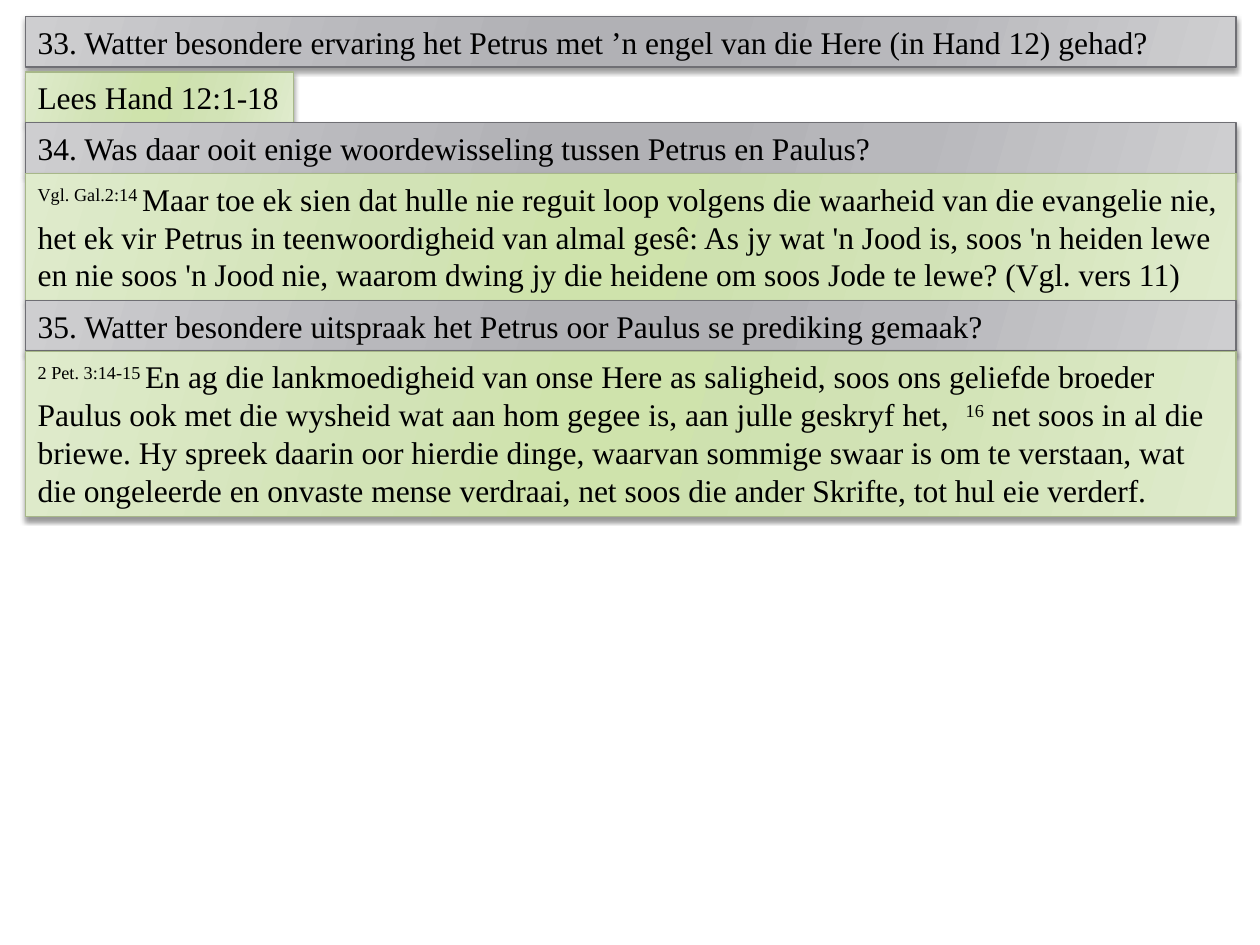
import dataclasses

import lxml.etree
import pptx
import pptx.dml.color
import pptx.enum.shapes
import pptx.enum.text
import pptx.oxml
import pptx.oxml.ns
import pptx.util

Inches = pptx.util.Inches
Pt = pptx.util.Pt
RGB = pptx.dml.color.RGBColor.from_string


# Colours, type and spacing
@dataclasses.dataclass(frozen=True)
class Theme:
    font: str = "Times New Roman"
    size: int = 18
    ink: str = "000000"
    gray: tuple = ("CECED0", "B8B8BC", "B1B1B5", "B1B1B5", "B8B8BC", "CECED0")
    green: tuple = ("DFEBCC", "D2E3B6", "CFE3AC", "CEE1AF", "D2E3B6", "DFEBCC")
    stops: tuple = (0, 30, 45, 55, 73, 100)
    angle: int = 16
    gray_edge: str = "6F6F74"
    green_edge: str = "A7B789"
    left: float = 0.2
    top: float = 0.13
    wide: float = 9.61
    gap: float = 0.04
    pad: float = 0.05


THEME = Theme()

# Each row: question or answer, line count, width, gap below, (text, raised) runs
ROWS = [
    ("ask", 1, THEME.wide, THEME.gap, [
        ("33. Watter besondere ervaring het Petrus met ’n engel van die Here "
         "(in Hand 12) gehad?", False)]),
    ("reply", 1, 2.13, 0, [("Lees Hand 12:1-18", False)]),
    ("ask", 1, THEME.wide, 0, [
        ("34. Was daar ooit enige woordewisseling tussen Petrus en Paulus?", False)]),
    ("reply", 3, THEME.wide, 0, [
        ("Vgl. Gal.2:14 ", True),
        ("Maar toe ek sien dat hulle nie reguit loop volgens die waarheid van die "
         "evangelie nie, het ek vir Petrus in teenwoordigheid van almal gesê: As jy "
         "wat 'n Jood is, soos 'n heiden lewe en nie soos 'n Jood nie, waarom dwing "
         "jy die heidene om soos Jode te lewe? (Vgl. vers 11)", False)]),
    ("ask", 1, THEME.wide, 0, [
        ("35. Watter besondere uitspraak het Petrus oor Paulus se prediking gemaak?",
         False)]),
    ("reply", 4, THEME.wide, 0, [
        ("2 Pet. 3:14-15 ", True),
        ("En ag die lankmoedigheid van onse Here as saligheid, soos ons geliefde "
         "broeder Paulus ook met die wysheid wat aan hom gegee is, aan julle geskryf "
         "het,  ", False),
        ("16", True),
        (" net soos in al die briewe. Hy spreek daarin oor hierdie dinge, waarvan "
         "sommige swaar is om te verstaan, wat die ongeleerde en onvaste mense "
         "verdraai, net soos die ander Skrifte, tot hul eie verderf.", False)]),
]


def child(node, tag, **attrs):
    item = lxml.etree.SubElement(node, pptx.oxml.ns.qn(tag))
    for name, value in attrs.items():
        item.set(name, str(value))
    return item


def blend(shape, colors):
    """Fill with a many-stop linear gradient."""
    shape.fill.gradient()
    shape.fill.gradient_angle = 0
    grad = shape.element.spPr.find(pptx.oxml.ns.qn("a:gradFill"))
    stops = grad.find(pptx.oxml.ns.qn("a:gsLst"))
    for old in list(stops):
        stops.remove(old)
    for place, color in zip(THEME.stops, colors):
        stop = child(stops, "a:gs", pos=place * 1000)
        child(stop, "a:srgbClr", val=color)
    grad.find(pptx.oxml.ns.qn("a:lin")).set("ang", str(THEME.angle * 60000))


def shade(shape):
    """Drop a soft shadow straight down."""
    shape.shadow.inherit = False
    effect = shape.element.spPr.find(pptx.oxml.ns.qn("a:effectLst"))
    drop = child(effect, "a:outerShdw", blurRad=Pt(3), dist=Pt(2),
                 dir=90 * 60000, rotWithShape=0)
    color = child(drop, "a:srgbClr", val=THEME.ink)
    child(color, "a:alpha", val=40000)


def write(shape, parts):
    frame = shape.text_frame
    frame.word_wrap = True
    frame.auto_size = pptx.enum.text.MSO_AUTO_SIZE.SHAPE_TO_FIT_TEXT
    frame.vertical_anchor = pptx.enum.text.MSO_ANCHOR.TOP
    frame.margin_top = frame.margin_bottom = Inches(THEME.pad)
    para = frame.paragraphs[0]
    para.alignment = pptx.enum.text.PP_ALIGN.LEFT
    for text, raised in parts:
        run = para.add_run()
        run.text = text
        run.font.name = THEME.font
        run.font.size = Pt(THEME.size)
        run.font.color.rgb = RGB(THEME.ink)
        if raised:
            run.font._element.set("baseline", "30000")


def panel(slide, kind, top, wide, high, parts):
    shape = slide.shapes.add_shape(
        pptx.enum.shapes.MSO_SHAPE.RECTANGLE,
        Inches(THEME.left), Inches(top), Inches(wide), Inches(high))
    ask = kind == "ask"
    blend(shape, THEME.gray if ask else THEME.green)
    shape.line.color.rgb = RGB(THEME.gray_edge if ask else THEME.green_edge)
    shape.line.width = Pt(0.75)
    shade(shape)
    write(shape, parts)


def main():
    deck = pptx.Presentation()
    deck.slide_width, deck.slide_height = Inches(10), Inches(7.5)
    slide = deck.slides.add_slide(deck.slide_layouts[6])

    # Stack the panels, each as high as its lines of text
    line = THEME.size * 1.21 / 72
    top = THEME.top
    for kind, count, wide, gap, parts in ROWS:
        high = count * line + 2 * THEME.pad
        panel(slide, kind, top, wide, high, parts)
        top += high + gap

    deck.save("out.pptx")


if __name__ == "__main__":
    main()
